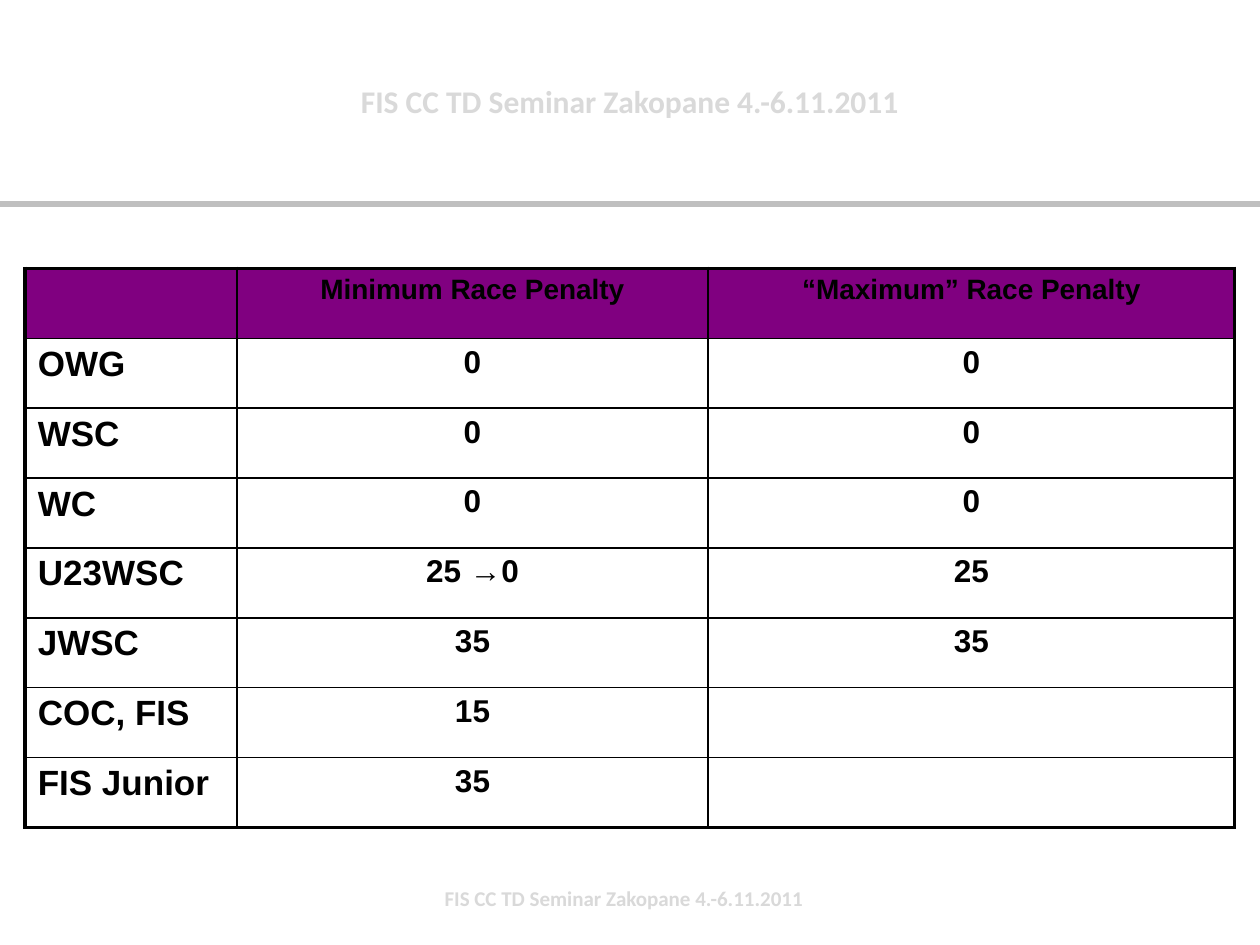
from lxml import etree
from pptx import Presentation
from pptx.dml.color import RGBColor
from pptx.enum.shapes import MSO_CONNECTOR
from pptx.enum.text import MSO_ANCHOR, PP_ALIGN
from pptx.oxml.ns import qn
from pptx.util import Inches, Pt

SEMINAR = "FIS CC TD Seminar Zakopane 4.-6.11.2011"
BLACK, PALE_GREY, RULE_GREY, PURPLE = "000000", "D9D9D9", "BFBFBF", "800080"
OUTER, INNER = 2.25, 1

PENALTIES = [
    ("", "Minimum Race Penalty", "“Maximum” Race Penalty"),
    ("OWG", "0", "0"),
    ("WSC", "0", "0"),
    ("WC", "0", "0"),
    ("U23WSC", "25 →0", "25"),
    ("JWSC", "35", "35"),
    ("COC, FIS", "15", ""),
    ("FIS Junior", "35", ""),
]
COLUMN_WIDTHS = (1.68, 3.74, 4.18)
ROW_HEIGHT = 0.555


def color(hex_value):
    return RGBColor.from_string(hex_value)


def write(frame, text, align, **font_format):
    """Put one formatted paragraph in a text frame."""
    paragraph = frame.paragraphs[0]
    paragraph.alignment = align
    paragraph.space_before = Pt(0)
    run = paragraph.add_run()
    run.text = text
    hex_value = font_format.pop("color")
    for name, value in font_format.items():
        setattr(run.font, name, value)
    run.font.color.rgb = color(hex_value)


def add_heading(slide):
    heading = slide.shapes.title
    box = {"left": 0, "top": 0.6, "width": 10, "height": 0.4}
    for name, value in box.items():
        setattr(heading, name, Inches(value))
    heading.text_frame.vertical_anchor = MSO_ANCHOR.TOP
    write(heading.text_frame, SEMINAR, PP_ALIGN.CENTER,
          size=Pt(18), name="Calibri", bold=True, color=PALE_GREY)


def add_footer(slide):
    footer = slide.shapes.add_textbox(
        Inches(3.43), Inches(6.98), Inches(3.09), Inches(0.3))
    footer.text_frame.word_wrap = False
    write(footer.text_frame, SEMINAR, PP_ALIGN.LEFT,
          size=Pt(12), name="Calibri", bold=True, color=PALE_GREY)


def add_rule(slide):
    rule = slide.shapes.add_connector(
        MSO_CONNECTOR.STRAIGHT, 0, Inches(1.62), Inches(10), Inches(1.62))
    rule.line.color.rgb = color(RULE_GREY)
    rule.line.width = Pt(3)
    etree.SubElement(rule._element.spPr, qn("a:effectLst"))


def set_borders(cell, widths):
    """Draw black borders; widths are points in the order L, R, T, B."""
    properties = cell._tc.get_or_add_tcPr()
    for side, width in zip("LRTB", widths):
        border = etree.SubElement(properties, qn(f"a:ln{side}"), w=str(Pt(width)))
        fill = etree.SubElement(border, qn("a:solidFill"))
        etree.SubElement(fill, qn("a:srgbClr"), val=BLACK)


def fill_header(cell):
    """Half-transparent purple."""
    cell.fill.solid()
    cell.fill.fore_color.rgb = color(PURPLE)
    tint = cell._tc.tcPr.find(".//" + qn("a:srgbClr"))
    etree.SubElement(tint, qn("a:alpha"), val="50000")


def add_penalty_table(slide):
    row_count, column_count = len(PENALTIES), len(COLUMN_WIDTHS)
    table = slide.shapes.add_table(
        row_count, column_count, Inches(0.2), Inches(2.13),
        Inches(sum(COLUMN_WIDTHS)), Inches(ROW_HEIGHT * row_count)).table
    table.first_row = table.horz_banding = False
    for column, width in zip(table.columns, COLUMN_WIDTHS):
        column.width = Inches(width)

    for r, texts in enumerate(PENALTIES):
        table.rows[r].height = Inches(ROW_HEIGHT)
        for c, text in enumerate(texts):
            cell = table.cell(r, c)
            # Thick lines only around the whole table
            on_edge = (c == 0, c == column_count - 1, r == 0, r == row_count - 1)
            set_borders(cell, [OUTER if edge else INNER for edge in on_edge])
            if r == 0:
                fill_header(cell)
            else:
                cell.fill.background()
            if text:
                size = 16 if r == 0 else 20 if c == 0 else 18
                align = PP_ALIGN.LEFT if c == 0 else PP_ALIGN.CENTER
                write(cell.text_frame, text, align,
                      size=Pt(size), name="Arial", bold=True, color=BLACK)


def main():
    presentation = Presentation()
    presentation.slide_width = Inches(10)
    presentation.slide_height = Inches(7.5)
    slide = presentation.slides.add_slide(presentation.slide_layouts[5])
    add_rule(slide)
    add_footer(slide)
    add_heading(slide)
    add_penalty_table(slide)
    presentation.save("out.pptx")


if __name__ == "__main__":
    main()
